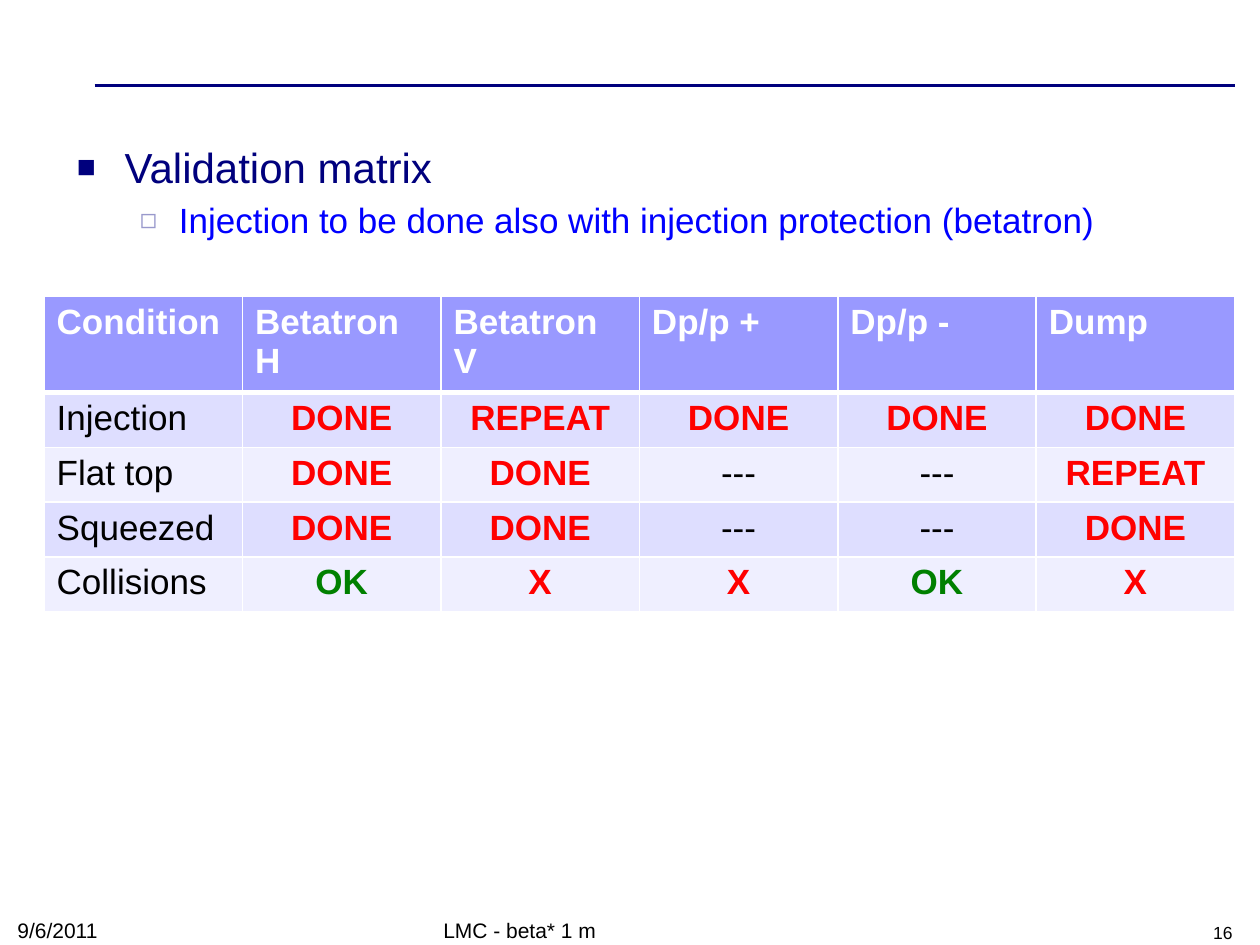
"""Build the validation matrix slide on a grid of 100 columns by 75 rows."""
import lxml.etree
import pptx
import pptx.dml.color
import pptx.enum.shapes
import pptx.enum.text
import pptx.oxml.ns
import pptx.util

COLORS = {"navy": "00007D", "blue": "0000FF", "lilac": "9999CC", "black": "000000",
          "white": "FFFFFF", "red": "FF0000", "green": "008000",
          "header": "9999FF", "odd": "DEDEFF", "even": "EFEFFF"}
ALIGN = pptx.enum.text.PP_ALIGN
ANCHOR = pptx.enum.text.MSO_ANCHOR
qn = pptx.oxml.ns.qn

prs = pptx.Presentation()
prs.slide_width, prs.slide_height = pptx.util.Inches(10), pptx.util.Inches(7.5)
U = prs.slide_width // 100


def write(p, text, size=20, color="black", bold=False, align=ALIGN.LEFT, before=0):
    p.alignment = align
    p.space_before = pptx.util.Pt(before)
    r = p.add_run()
    r.text = text
    r.font.name, r.font.size, r.font.bold = "Arial", pptx.util.Pt(size), bold
    r.font.color.rgb = pptx.dml.color.RGBColor.from_string(COLORS[color])


def add_solid(parent, color):
    fill = lxml.etree.SubElement(parent, qn("a:solidFill"))
    lxml.etree.SubElement(fill, qn("a:srgbClr"), val=COLORS[color])


s = prs.slides.add_slide(prs.slide_layouts[1])
s.shapes.title.element.getparent().remove(s.shapes.title.element)

rule = s.shapes.add_connector(pptx.enum.shapes.MSO_CONNECTOR.STRAIGHT,
                              int(7.5 * U), int(6.8 * U), 98 * U, int(6.8 * U))
rule.line.width = pptx.util.Pt(2)
rule.line.color.rgb = pptx.dml.color.RGBColor.from_string(COLORS["navy"])
lxml.etree.SubElement(rule.element.spPr, qn("a:effectLst"))

body = s.placeholders[1]
body.left, body.top, body.width, body.height = (int(n * U) for n in (5.1, 10.7, 91.4, 14.2))
tf = body.text_frame
tf.word_wrap = True
tf.auto_size = pptx.enum.text.MSO_AUTO_SIZE.NONE
tf.vertical_anchor = ANCHOR.TOP
bullets = [
    ("Validation matrix", 24, "navy", 3.8, 3.8, "■", "navy", 75, 0),
    ("Injection to be done also with injection protection (betatron)",
     20, "blue", 8.1, 3.1, "◻", "lilac", 80, 4),
]
for level, (text, size, color, margin, hang, mark, tint, percent, before) in enumerate(bullets):
    p = tf.add_paragraph() if level else tf.paragraphs[0]
    p.level = level
    pPr = p._p.get_or_add_pPr()
    pPr.set("marL", str(int(margin * U)))
    pPr.set("indent", str(-int(hang * U)))
    buClr = lxml.etree.SubElement(pPr, qn("a:buClr"))
    lxml.etree.SubElement(buClr, qn("a:srgbClr"), val=COLORS[tint])
    lxml.etree.SubElement(pPr, qn("a:buSzPct"), val=str(percent * 1000))
    lxml.etree.SubElement(pPr, qn("a:buFont"), typeface="Arial")
    lxml.etree.SubElement(pPr, qn("a:buChar"), char=mark)
    write(p, text, size=size, color=color, before=before)

footers = [
    ("16", 75.5, 23.3, 10, ALIGN.RIGHT),
    ("LMC - beta* 1 m", 34.2, 31.7, 12, ALIGN.LEFT),
    ("9/6/2011", 0.4, 23.3, 12, ALIGN.LEFT),
]
for text, left, width, size, align in footers:
    sp = s.shapes.add_textbox(int(left * U), int(72.5 * U), int(width * U), int(2.8 * U))
    tf = sp.text_frame
    tf.word_wrap = True
    tf.vertical_anchor = ANCHOR.BOTTOM
    write(tf.paragraphs[0], text, size=size, align=align)

rows = [
    ["Condition", "Betatron H", "Betatron V", "Dp/p +", "Dp/p -", "Dump"],
    ["Injection", "DONE", "REPEAT", "DONE", "DONE", "DONE"],
    ["Flat top", "DONE", "DONE", "---", "---", "REPEAT"],
    ["Squeezed", "DONE", "DONE", "---", "---", "DONE"],
    ["Collisions", "OK", "X", "X", "OK", "X"],
]
status = {"DONE": "red", "REPEAT": "red", "X": "red", "OK": "green"}
table = s.shapes.add_table(len(rows), len(rows[0]), int(3.5 * U), int(23.5 * U),
                           int(94.5 * U), int(20.3 * U)).table
for i, row in enumerate(rows):
    for j, text in enumerate(row):
        cell = table.cell(i, j)
        tcPr = cell._tc.get_or_add_tcPr()
        for side in "LRTB":
            thick = (i, side) in ((0, "B"), (1, "T"))
            ln = lxml.etree.SubElement(tcPr, qn("a:ln" + side),
                                       w=str(pptx.util.Pt(3 if thick else 1)))
            add_solid(ln, "white")
        shade = "header" if i == 0 else "odd" if i % 2 else "even"
        cell.fill.solid()
        cell.fill.fore_color.rgb = pptx.dml.color.RGBColor.from_string(COLORS[shade])
        write(cell.text_frame.paragraphs[0], text,
              color="white" if i == 0 else status.get(text, "black"),
              bold=i == 0 or text in status,
              align=ALIGN.CENTER if i and j else ALIGN.LEFT)

prs.save("out.pptx")
